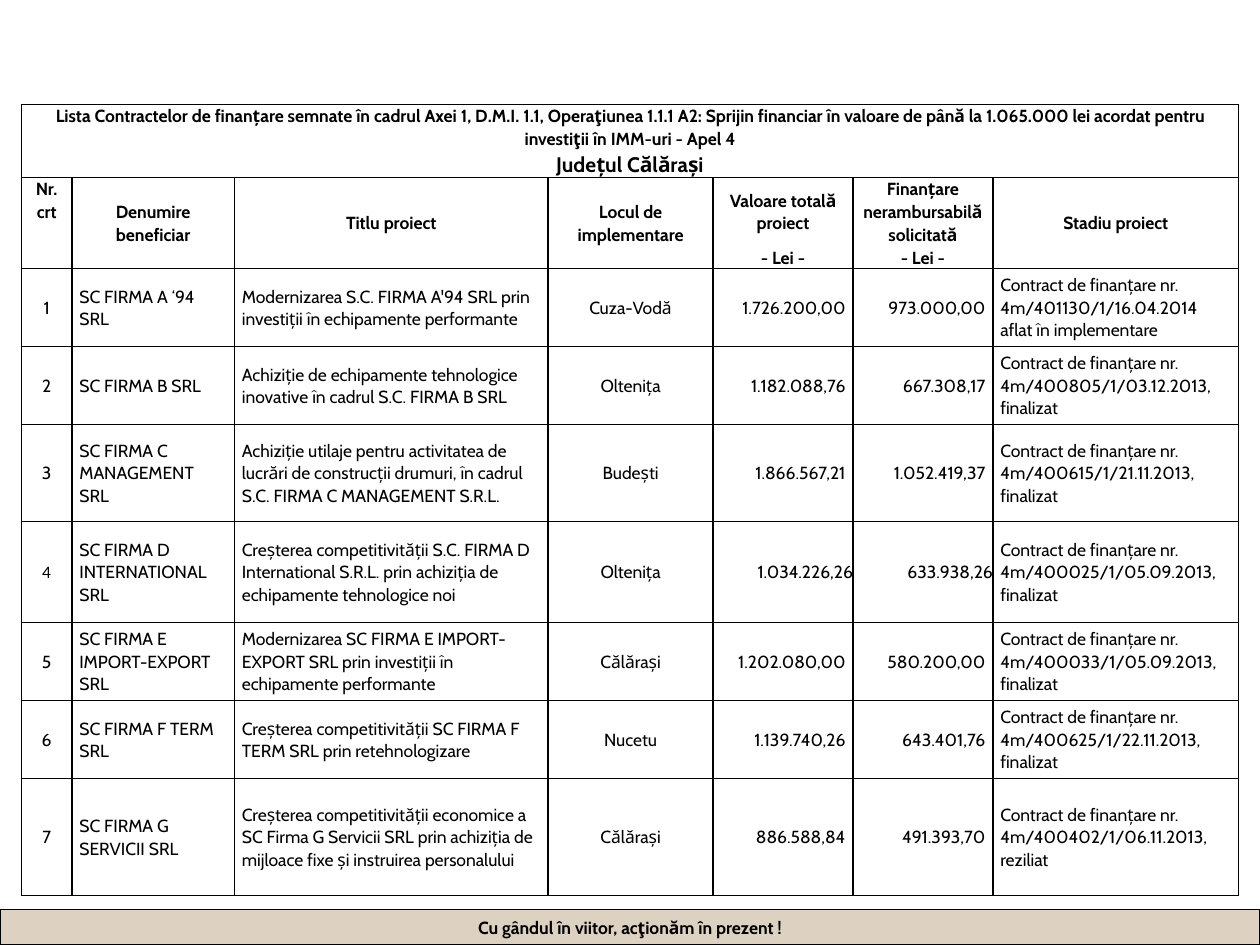
from lxml.etree import SubElement
from pptx import Presentation
from pptx.dml.color import RGBColor
from pptx.enum.shapes import MSO_SHAPE
from pptx.enum.text import MSO_ANCHOR, PP_ALIGN
from pptx.oxml.ns import qn
from pptx.util import Inches, Pt

FONT = "Cabin"
BLACK, WHITE, SAND = "000000", "FFFFFF", "DDD1C1"
LEFT, CENTER, RIGHT = PP_ALIGN.LEFT, PP_ALIGN.CENTER, PP_ALIGN.RIGHT

COLUMN_WIDTHS = [0.4, 1.29, 2.49, 1.31, 1.11, 1.11, 1.95]
ROW_HEIGHTS = [0.58, 0.54, 0.17, 0.62, 0.62, 0.77, 0.8, 0.62, 0.62, 0.93]
COLUMN_ALIGNS = [CENTER, LEFT, LEFT, CENTER, RIGHT, RIGHT, LEFT]
VALUE_COLUMNS = (4, 5)
FIRST_PROJECT_ROW = 3
UNPADDED_PROJECT = 4

TITLE = ("Lista Contractelor de finanțare semnate în cadrul Axei 1, D.M.I. 1.1, "
         "Operaţiunea 1.1.1 A2: Sprijin financiar în valoare de până la "
         "1.065.000 lei acordat pentru investiţii în IMM-uri - Apel 4")
COUNTY = "Județul Călărași"
HEADINGS = ["Nr. crt", "Denumire beneficiar", "Titlu proiect", "Locul de implementare",
            "Valoare totală proiect", "Finanțare nerambursabilă solicitată",
            "Stadiu proiect"]
CURRENCY = "- Lei -"
SLOGAN = "Cu gândul în viitor, acţionăm în prezent !"

# Beneficiary, project title, place, total value, grant, contract and state
PROJECTS = [
    ("SC FIRMA A ‘94 SRL",
     "Modernizarea S.C. FIRMA A'94 SRL prin investiții în echipamente performante",
     "Cuza-Vodă", "1.726.200,00", "973.000,00",
     "4m/401130/1/16.04.2014 aflat în implementare"),
    ("SC FIRMA B SRL",
     "Achiziție de echipamente tehnologice inovative în cadrul S.C. FIRMA B SRL",
     "Oltenița", "1.182.088,76", "667.308,17", "4m/400805/1/03.12.2013, finalizat"),
    ("SC FIRMA C MANAGEMENT SRL",
     "Achiziție utilaje pentru activitatea de lucrări de construcții drumuri, "
     "în cadrul S.C. FIRMA C MANAGEMENT S.R.L.",
     "Budești", "1.866.567,21", "1.052.419,37", "4m/400615/1/21.11.2013, finalizat"),
    ("SC FIRMA D INTERNATIONAL SRL",
     "Creșterea competitivității S.C. FIRMA D International S.R.L. prin achiziția de "
     "echipamente tehnologice noi",
     "Oltenița", "1.034.226,26", "633.938,26", "4m/400025/1/05.09.2013, finalizat"),
    ("SC FIRMA E IMPORT-EXPORT SRL",
     "Modernizarea SC FIRMA E IMPORT-EXPORT SRL prin investiții în "
     "echipamente performante",
     "Călărași", "1.202.080,00", "580.200,00", "4m/400033/1/05.09.2013, finalizat"),
    ("SC FIRMA F TERM SRL",
     "Creșterea competitivității SC FIRMA F TERM SRL prin retehnologizare",
     "Nucetu", "1.139.740,26", "643.401,76", "4m/400625/1/22.11.2013, finalizat"),
    ("SC FIRMA G SERVICII SRL",
     "Creșterea competitivității economice a SC Firma G Servicii SRL prin achiziția "
     "de mijloace fixe și instruirea personalului",
     "Călărași", "886.588,84", "491.393,70", "4m/400402/1/06.11.2013, reziliat"),
]


def color(value):
    return RGBColor.from_string(value)


def write(para, text, align, spacing=None, size=10, bold=False, font=FONT):
    para.alignment = align
    para.line_spacing = spacing
    span = para.add_run()
    span.text = text
    formats = {"name": font, "size": Pt(size), "bold": bold}
    for name, value in formats.items():
        setattr(span.font, name, value)
    span.font.color.rgb = color(BLACK)


def draw_borders(cell, hidden=()):
    properties = cell._tc.get_or_add_tcPr()
    for side in ("L", "R", "T", "B"):
        line = SubElement(properties, qn(f"a:ln{side}"), w=str(Pt(1)))
        if side in hidden:
            SubElement(line, qn("a:noFill"))
        else:
            fill = SubElement(line, qn("a:solidFill"))
            SubElement(fill, qn("a:srgbClr"), val=BLACK)


def format_cell(cell, padding=0.06, anchor=MSO_ANCHOR.MIDDLE, fill=None):
    formats = {"margin_left": Inches(padding), "margin_right": Inches(padding),
               "margin_top": 0, "margin_bottom": 0, "vertical_anchor": anchor}
    for name, value in formats.items():
        setattr(cell, name, value)
    if fill:
        cell.fill.solid()
        cell.fill.fore_color.rgb = color(fill)
    else:
        cell.fill.background()


def add_grid(page):
    frame = page.shapes.add_table(
        len(ROW_HEIGHTS), len(COLUMN_WIDTHS), Inches(0.17), Inches(0.83),
        Inches(sum(COLUMN_WIDTHS)), Inches(sum(ROW_HEIGHTS)))
    table = frame.table
    table.first_row = table.horz_banding = False
    for column, width in zip(table.columns, COLUMN_WIDTHS):
        column.width = Inches(width)
    for row, height in zip(table.rows, ROW_HEIGHTS):
        row.height = Inches(height)
    open_sides = {1: "B", 2: "T"}
    for row_index, row in enumerate(table.rows):
        for column_index, cell in enumerate(row.cells):
            is_value = column_index in VALUE_COLUMNS
            draw_borders(cell, open_sides.get(row_index, "") if is_value else "")
            format_cell(cell)
    return table


def fill_headings(table):
    title = table.cell(0, 0)
    title.merge(table.cell(0, len(COLUMN_WIDTHS) - 1))
    format_cell(title, anchor=MSO_ANCHOR.TOP)
    write(title.text_frame.paragraphs[0], TITLE, CENTER, 1.07, bold=True)
    write(title.text_frame.add_paragraph(), COUNTY, CENTER, 1.07, 12, True)
    for column, heading in enumerate(HEADINGS):
        cell, below = table.cell(1, column), table.cell(2, column)
        write(cell.text_frame.paragraphs[0], heading, CENTER, 1.07, bold=True)
        if column in VALUE_COLUMNS:
            write(below.text_frame.paragraphs[0], CURRENCY, CENTER, 1.07, bold=True)
        else:
            cell.merge(below)
    format_cell(table.cell(1, 0), anchor=MSO_ANCHOR.TOP)


def fill_projects(table):
    for number, (*details, contract) in enumerate(PROJECTS, 1):
        texts = [str(number), *details, f"Contract de finanțare nr. {contract}"]
        for column, (text, align) in enumerate(zip(texts, COLUMN_ALIGNS)):
            cell = table.cell(FIRST_PROJECT_ROW + number - 1, column)
            special = number == UNPADDED_PROJECT
            unpadded = special and column in VALUE_COLUMNS
            format_cell(cell, padding=0 if unpadded else 0.06,
                        fill=WHITE if column < VALUE_COLUMNS[0] else None)
            write(cell.text_frame.paragraphs[0], text, align,
                  None if unpadded else 1.06,
                  font="Calibri" if special and column == 0 else FONT)


def add_slogan_bar(page, deck):
    height = Inches(0.28)
    bar = page.shapes.add_shape(MSO_SHAPE.RECTANGLE, 0, deck.slide_height - height,
                                deck.slide_width, height)
    bar.shadow.inherit = False
    bar.fill.solid()
    bar.fill.fore_color.rgb = color(SAND)
    bar.line.color.rgb = color(BLACK)
    bar.line.width = Pt(0.75)
    bar.text_frame.word_wrap = False
    bar.text_frame.vertical_anchor = MSO_ANCHOR.MIDDLE
    write(bar.text_frame.paragraphs[0], SLOGAN, CENTER, bold=True)


def main():
    deck = Presentation()
    deck.slide_width, deck.slide_height = Inches(10), Inches(7.5)
    page = deck.slides.add_slide(deck.slide_layouts[6])
    add_slogan_bar(page, deck)
    table = add_grid(page)
    fill_headings(table)
    fill_projects(table)
    deck.save("out.pptx")


if __name__ == "__main__":
    main()
